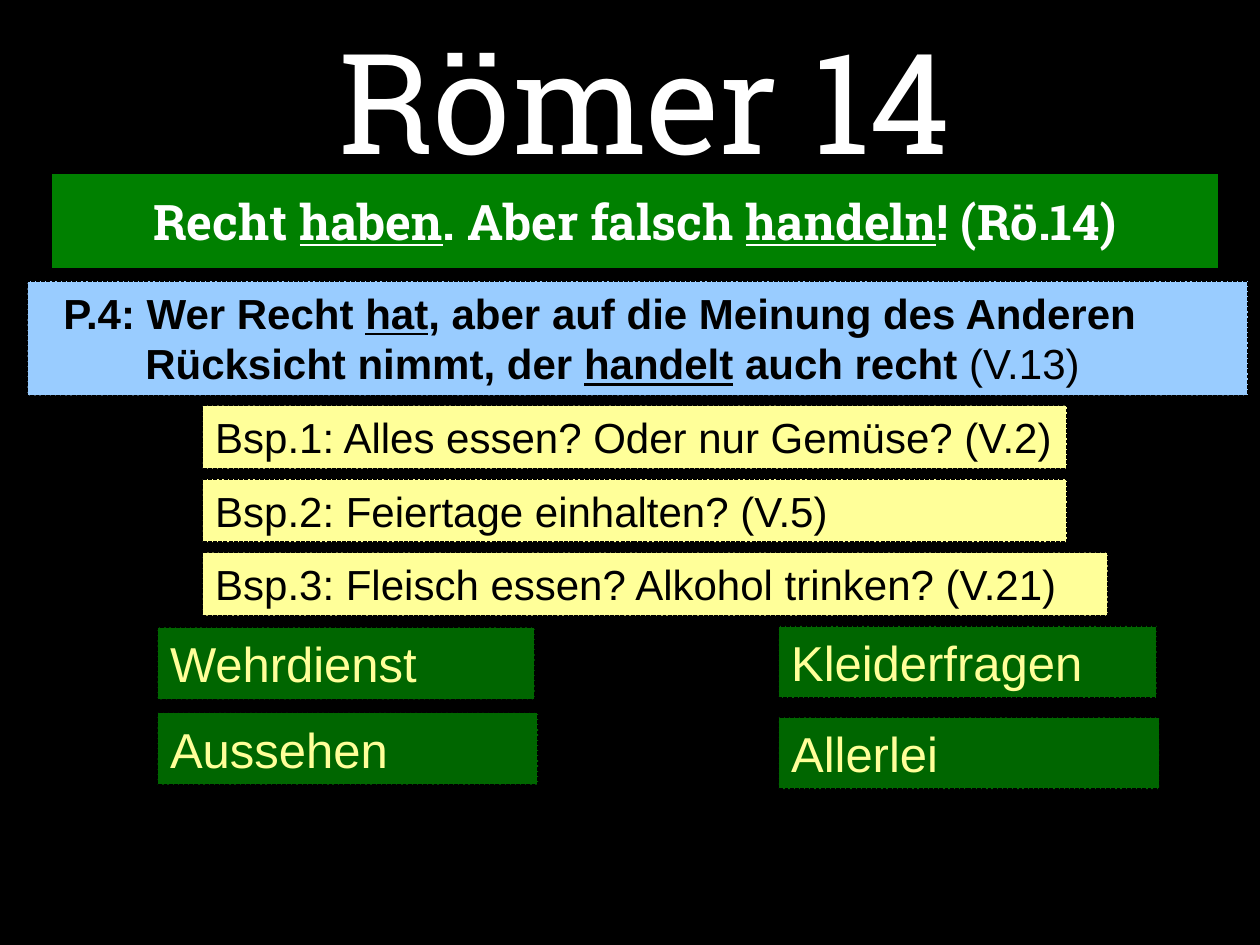
from pptx import Presentation
from pptx import util as u
from pptx.dml.color import RGBColor
from pptx.enum import dml, shapes, text

COLORS = {
    "black": "000000", "white": "FFFFFF", "banner": "008000",
    "point": "99CCFF", "example": "FFFF99", "topic": "006600",
}
UNDERLINED = {"underline": True}


class SlideBuilder:
    def __init__(self, presentation):
        self.slide = presentation.slides.add_slide(presentation.slide_layouts[5])
        background = self.slide.background.fill
        background.solid()
        background.fore_color.rgb = self.color("black")

    def color(self, name):
        return RGBColor.from_string(COLORS[name])

    def add_runs(self, paragraph, runs, color, **font):
        """Add runs, each a plain string or a (string, format values) pair."""
        for item in runs:
            words, extra = (item, {}) if isinstance(item, str) else item
            run = paragraph.add_run()
            run.text = words
            run.font.color.rgb = self.color(color)
            for name, value in {**font, **extra}.items():
                setattr(run.font, name, value)

    def title(self, words, left, top, width, height):
        title = self.slide.shapes.title
        title.left, title.top, title.width, title.height = map(
            u.Cm, (left, top, width, height))
        frame = title.text_frame
        frame.auto_size = text.MSO_AUTO_SIZE.NONE
        frame.vertical_anchor = text.MSO_ANCHOR.MIDDLE
        paragraph = frame.paragraphs[0]
        paragraph.alignment = text.PP_ALIGN.CENTER
        self.add_runs(paragraph, [words], "white", name="Roboto Slab", size=u.Pt(80))

    def box(self, lines, left, top, width, height, fill, color="black",
            align=text.PP_ALIGN.LEFT, anchor=text.MSO_ANCHOR.TOP,
            line_width=0.75, dash=dml.MSO_LINE.SQUARE_DOT, indents=None, **font):
        """Draw a filled rectangle with one paragraph per list of runs."""
        shape = self.slide.shapes.add_shape(
            shapes.MSO_SHAPE.RECTANGLE, *map(u.Cm, (left, top, width, height)))
        shape.shadow.inherit = False
        shape.fill.solid()
        shape.fill.fore_color.rgb = self.color(fill)
        shape.line.color.rgb = self.color("black")
        shape.line.width = u.Pt(line_width)
        shape.line.dash_style = dash
        frame = shape.text_frame
        frame.word_wrap = True
        frame.vertical_anchor = anchor
        for index, runs in enumerate(lines):
            paragraph = frame.add_paragraph() if index else frame.paragraphs[0]
            paragraph.alignment = align
            if indents:
                properties = paragraph._p.get_or_add_pPr()
                properties.set("marL", str(u.Cm(indents[index])))
            self.add_runs(paragraph, runs, color, **font)


def main():
    presentation = Presentation()
    presentation.slide_width, presentation.slide_height = u.Cm(25.4), u.Cm(19.05)
    builder = SlideBuilder(presentation)

    builder.title("Römer 14", 1.57, 0, 22.86, 3.99)
    builder.box(
        [["Recht ", ("haben", UNDERLINED), ". Aber falsch ",
          ("handeln", UNDERLINED), "! (Rö.14)"]],
        1, 3.45, 23.6, 2, "banner", "white", align=text.PP_ALIGN.CENTER,
        anchor=text.MSO_ANCHOR.MIDDLE, line_width=3, dash=dml.MSO_LINE.SOLID,
        name="Roboto Slab", size=u.Pt(28), bold=True)
    builder.box(
        [["P.4: Wer Recht ", ("hat", UNDERLINED),
          ", aber auf die Meinung des Anderen"],
         ["Rücksicht nimmt, der ", ("handelt", UNDERLINED), " auch recht ",
          ("(V.13)", {"bold": False})]],
        0.56, 5.67, 24.6, 2.3, "point", indents=(0.47, 2.12),
        name="Arial", size=u.Pt(24), bold=True)

    examples = [
        ("Bsp.1: Alles essen? Oder nur Gemüse? (V.2)", 17.42),
        ("Bsp.2: Feiertage einhalten? (V.5)", 17.42),
        ("Bsp.3: Fleisch essen? Alkohol trinken? (V.21)", 18.24),
    ]
    for row, (words, width) in enumerate(examples):
        builder.box([[words]], 4.09, 8.18 + row * 1.48, width, 1.27, "example",
                    name="Arial", size=u.Pt(24))

    topics = [
        ("Wehrdienst", 3.18, 12.65, 7.6), ("Kleiderfragen", 15.7, 12.62, 7.62),
        ("Aussehen", 3.18, 14.37, 7.67), ("Allerlei", 15.7, 14.46, 7.67),
    ]
    for words, left, top, width in topics:
        builder.box([[words]], left, top, width, 1.45, "topic", "example",
                    name="Arial", size=u.Pt(28))

    presentation.save("out.pptx")


if __name__ == "__main__":
    main()
